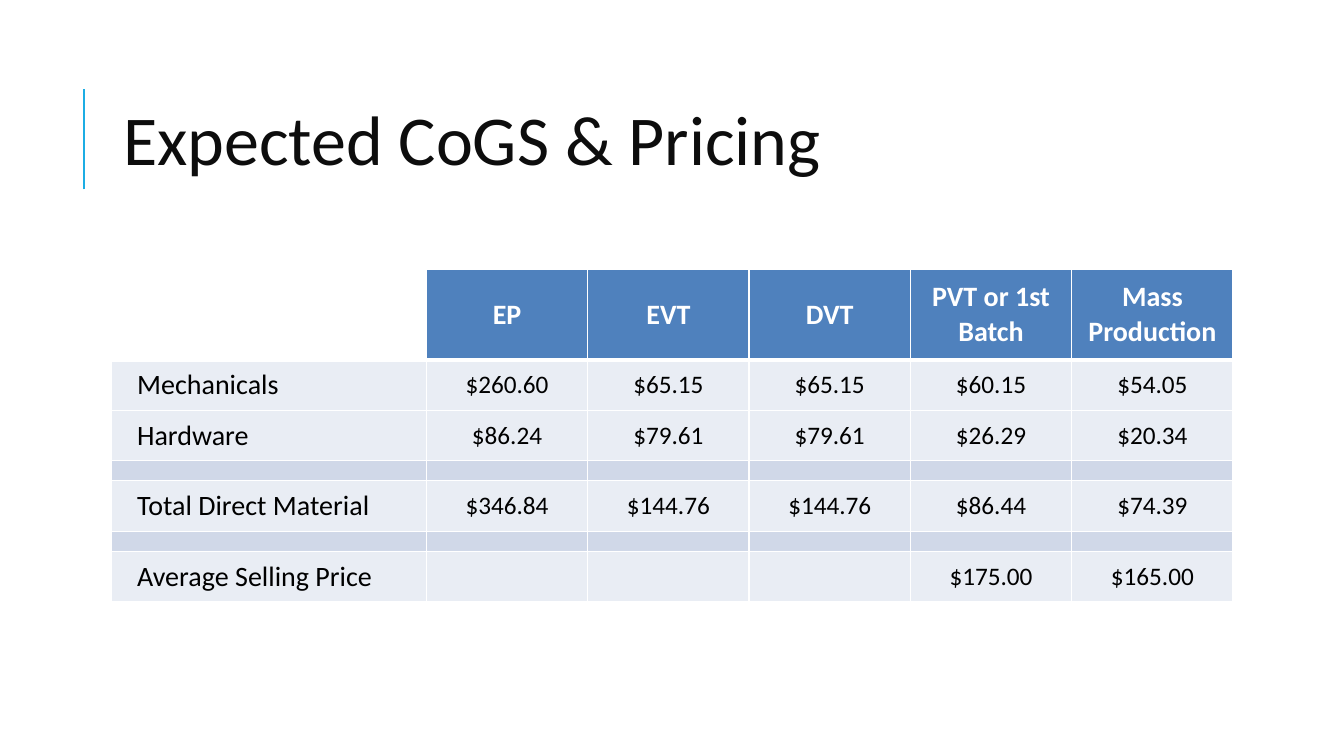
import pptx
import pptx.util
import pptx.dml.color
import pptx.enum.shapes
import pptx.enum.text
import pptx.oxml.ns
import lxml.etree

Inches, Pt = pptx.util.Inches, pptx.util.Pt
ALIGN, ANCHOR = pptx.enum.text.PP_ALIGN, pptx.enum.text.MSO_ANCHOR
qn = pptx.oxml.ns.qn

TITLE = "Expected CoGS & Pricing"
HEADER = ["", "EP", "EVT", "DVT", "PVT or 1st Batch", "Mass Production"]
SPACER = [""] * len(HEADER)
ROWS = [
    HEADER,
    ["Mechanicals", "$260.60", "$65.15", "$65.15", "$60.15", "$54.05"],
    ["Hardware", "$86.24", "$79.61", "$79.61", "$26.29", "$20.34"],
    SPACER,
    ["Total Direct Material", "$346.84", "$144.76", "$144.76", "$86.44", "$74.39"],
    SPACER,
    ["Average Selling Price", "", "", "", "$175.00", "$165.00"],
]
COL_WIDTHS = [3.12] + [1.6] * 5
COLORS = {"white": "FFFFFF", "black": "000000", "title": "0D0D0D", "accent": "1CADE4",
          "header": "4F81BD", "body": "E9EDF4", "spacer": "D0D8E8"}
FONT = "Calibri"


def rgb(name):
    return pptx.dml.color.RGBColor.from_string(COLORS[name])


def add_run(p, text, size, color, bold=False):
    r = p.add_run()
    r.text = text
    r.font.name, r.font.size, r.font.bold = FONT, Pt(size), bold
    r.font.color.rgb = rgb(color)


def add_borders(cell, bottom_width):
    tc_pr = cell._tc.get_or_add_tcPr()
    for side, width in (("L", 1), ("R", 1), ("T", 1), ("B", bottom_width)):
        ln = lxml.etree.SubElement(tc_pr, qn("a:ln" + side), w=str(Pt(width)))
        fill = lxml.etree.SubElement(ln, qn("a:solidFill"))
        lxml.etree.SubElement(fill, qn("a:srgbClr"), val=COLORS["white"])


def format_cell(cell, text, is_header, is_label, fill):
    add_borders(cell, 3 if is_header else 1)
    cell.fill.solid()
    cell.fill.fore_color.rgb = rgb(fill)
    cell.margin_left = cell.margin_right = cell.margin_top = cell.margin_bottom = 0
    cell.vertical_anchor = ANCHOR.MIDDLE
    p = cell.text_frame.paragraphs[0]
    if not text:
        lxml.etree.SubElement(p._p, qn("a:endParaRPr"), sz="800")
        return
    if is_label:
        cell.margin_left = Inches(0.25)
    else:
        p.alignment = ALIGN.CENTER
    add_run(p, text, 20 if is_header or is_label else 18,
            "white" if is_header else "black", is_header)


def add_title(s):
    line = s.shapes.add_connector(pptx.enum.shapes.MSO_CONNECTOR.STRAIGHT,
                                  Inches(0.83), Inches(1.88), Inches(0.83), Inches(0.88))
    line.line.color.rgb = rgb("accent")
    line.line.width = Pt(1.5)
    lxml.etree.SubElement(line._element.spPr, qn("a:effectLst"))

    title = s.shapes.title
    title.left, title.top = Inches(1.12), Inches(0.62)
    title.width, title.height = Inches(10.63), Inches(1.64)
    tf = title.text_frame
    tf.word_wrap = True
    tf.auto_size = pptx.enum.text.MSO_AUTO_SIZE.NONE
    tf.vertical_anchor = ANCHOR.MIDDLE
    p = tf.paragraphs[0]
    p.alignment = ALIGN.LEFT
    p.line_spacing = 0.8
    add_run(p, TITLE, 50, "title")


def add_pricing_table(s):
    heights = [0.9 if row is HEADER else 0.2 if row is SPACER else 0.5 for row in ROWS]
    table = s.shapes.add_table(len(ROWS), len(HEADER), Inches(1.11), Inches(2.67),
                               Inches(sum(COL_WIDTHS)), Inches(sum(heights))).table
    table.first_row = table.horz_banding = False
    for column, width in zip(table.columns, COL_WIDTHS):
        column.width = Inches(width)
    for i, row in enumerate(ROWS):
        table.rows[i].height = Inches(heights[i])
        for j, text in enumerate(row):
            is_header = row is HEADER
            if is_header:
                fill = "header" if text else "white"
            else:
                fill = "spacer" if row is SPACER else "body"
            format_cell(table.cell(i, j), text, is_header, j == 0, fill)


def main():
    prs = pptx.Presentation()
    prs.slide_width, prs.slide_height = Inches(13.33), Inches(7.5)
    s = prs.slides.add_slide(prs.slide_layouts[5])
    add_title(s)
    add_pricing_table(s)
    prs.save("out.pptx")


if __name__ == "__main__":
    main()
